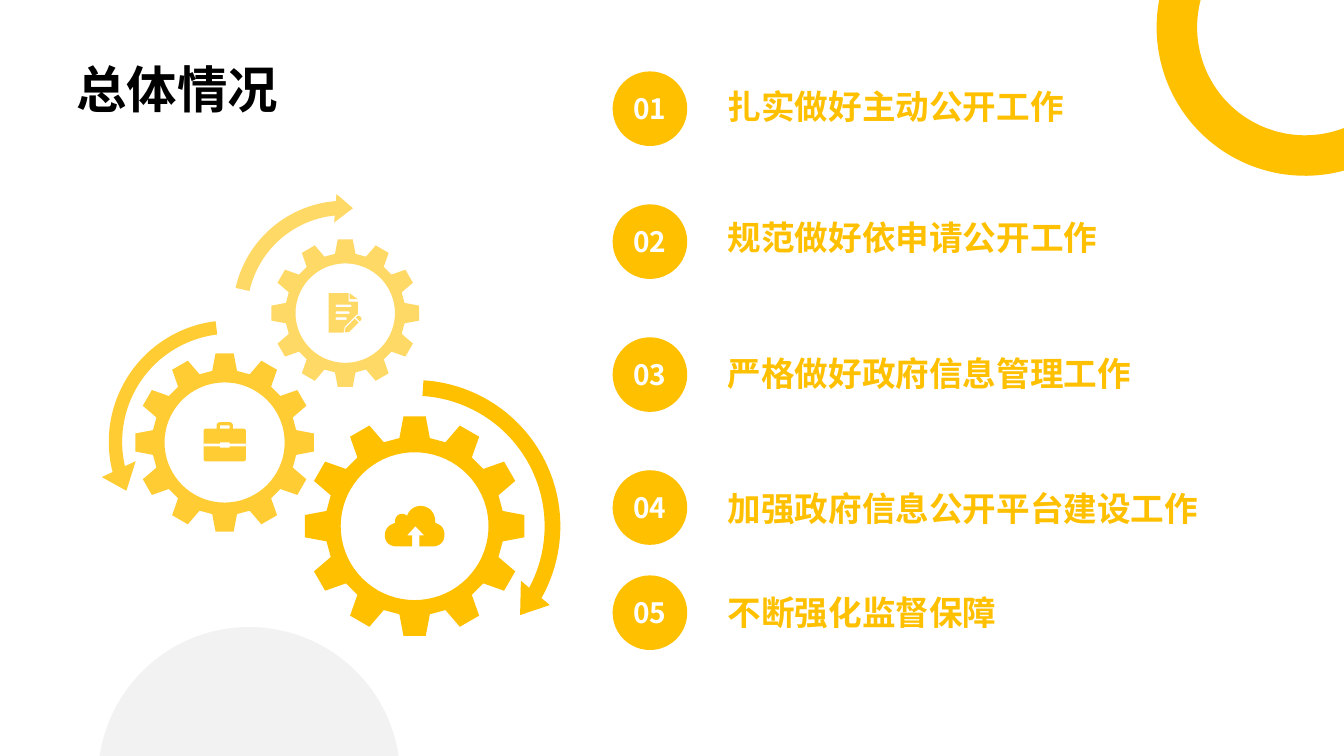
import math

from lxml import etree
from pptx import Presentation
from pptx.dml.color import RGBColor
from pptx.enum.shapes import MSO_SHAPE
from pptx.enum.text import MSO_ANCHOR, PP_ALIGN
from pptx.oxml.ns import qn
from pptx.util import Cm, Pt

OVAL, CIRCULAR_ARROW = MSO_SHAPE.OVAL, MSO_SHAPE.CIRCULAR_ARROW
BOTTOM, MIDDLE = MSO_ANCHOR.BOTTOM, MSO_ANCHOR.MIDDLE
LEFT, CENTER, JUSTIFY = PP_ALIGN.LEFT, PP_ALIGN.CENTER, PP_ALIGN.JUSTIFY

FONT = "Noto Sans CJK SC"
COLORS = {"amber": "FFC000", "black": "000000", "white": "FFFFFF"}
TEETH = 12

# Number, top of its disc, heading, top of the heading (cm)
TOPICS = [
    ("01", 1.8, "扎实做好主动公开工作", 2.29),
    ("02", 5.15, "规范做好依申请公开工作", 5.59),
    ("03", 8.5, "严格做好政府信息管理工作", 9.02),
    ("04", 11.85, "加强政府信息公开平台建设工作", 12.42),
    ("05", 14.5, "不断强化监督保障", 15.04),
]

# Outlines in cm: a pair is a corner, six numbers are a Bezier curve
CLOUD = [[
    (10.97, 13.18), (10.97, 13.18, 11, 12.8, 10.64, 12.75),
    (10.34, 12.73, 10.26, 13, 10.26, 13),
    (10.26, 13, 10.16, 12.9, 10.03, 12.98),
    (9.93, 13.06, 9.96, 13.18, 9.96, 13.18),
    (9.96, 13.18, 9.7, 13.23, 9.7, 13.49),
    (9.7, 13.77, 9.98, 13.77, 9.98, 13.77),
    (10.39, 13.77), (10.39, 13.49), (10.26, 13.49), (10.47, 13.26),
    (10.69, 13.49), (10.57, 13.49), (10.57, 13.77), (10.92, 13.77),
    (10.92, 13.77, 11.18, 13.77, 11.2, 13.51),
    (11.23, 13.23, 10.97, 13.18, 10.97, 13.18),
]]
PAGE = [(8.28, 7.39), (8.79, 7.39), (8.79, 7.6), (9.02, 7.6), (9.02, 7.92),
        (8.97, 7.95), (8.69, 8.23), (8.66, 8.38), (8.28, 8.38)]
PAGE_FOLD = [(8.81, 7.39), (9.02, 7.54), (8.81, 7.54)]
PENCIL = [(8.71, 8.26), (8.94, 8.03), (9.04, 8.13), (8.81, 8.36),
          (8.71, 8.38), (8.69, 8.36)]
ERASER = [(8.97, 8), (8.99, 7.98), (9.05, 7.92, 9.16, 8.02, 9.09, 8.08),
          (9.07, 8.1)]
CASE_GAP = [(5.13, 11.18), (5.54, 11.18), (5.54, 11.15), (5.79, 11.15),
            (5.79, 11.18), (6.2, 11.18), (6.2, 11.25), (5.79, 11.25),
            (5.79, 11.28), (5.54, 11.28), (5.54, 11.25), (5.13, 11.25)]


def polar(cx, cy, radius, degrees):
    angle = math.radians(degrees)
    return cx + radius * math.cos(angle), cy + radius * math.sin(angle)


def arc(cx, cy, radius, start, end, steps=72):
    return [polar(cx, cy, radius, start + (end - start) * i / steps)
            for i in range(steps + 1)]


def rounded_box(left, top, right, bottom, radius):
    corners = [(right - radius, bottom - radius, 0), (left + radius, bottom - radius, 90),
               (left + radius, top + radius, 180), (right - radius, top + radius, 270)]
    return [point for x, y, start in corners
            for point in arc(x, y, radius, start, start + 90, 6)]


def flatten(outline, steps=12):
    """Turn the curves of an outline into short straight pieces."""
    points = []
    for step in outline:
        if len(step) == 2:
            points.append(step)
            continue
        nodes = [points[-1], step[:2], step[2:4], step[4:]]
        for i in range(1, steps + 1):
            t = i / steps
            weights = ((1 - t) ** 3, 3 * t * (1 - t) ** 2, 3 * t * t * (1 - t), t ** 3)
            points.append(tuple(sum(w * node[axis] for w, node in zip(weights, nodes))
                                for axis in (0, 1)))
    return points


def paint(shape, color, opacity=100):
    shape.shadow.inherit = False
    shape.line.fill.background()
    shape.fill.solid()
    shape.fill.fore_color.rgb = RGBColor.from_string(COLORS[color])
    if opacity < 100:
        tint = shape.fill._xPr.find(qn("a:solidFill")).find(qn("a:srgbClr"))
        etree.SubElement(tint, qn("a:alpha"), val=str(opacity * 1000))


def add_outline(slide, outlines, color="amber", opacity=100):
    """Draw closed outlines as one shape; an outline inside another is a hole."""
    builder = None
    for outline in outlines:
        first, *rest = [(Cm(x), Cm(y)) for x, y in flatten(outline)]
        if builder is None:
            builder = slide.shapes.build_freeform(*first)
        else:
            builder.move_to(*first)
        builder.add_line_segments(rest, close=True)
    paint(builder.convert_to_shape(), color, opacity)


def add_gear(slide, cx, cy, radius, opacity):
    rim = []
    for tooth in range(TEETH):
        middle = tooth * 360 / TEETH
        for offset, reach in ((-9.8, 0.81), (-5.8, 1), (5.8, 1), (9.8, 0.81)):
            rim.append(polar(cx, cy, radius * reach, middle + offset))
    add_outline(slide, [rim, arc(cx, cy, radius * 0.67, 0, 360)], opacity=opacity)


def add_turn_arrow(slide, left, top, size, adjustments, opacity, flip=False):
    arrow = slide.shapes.add_shape(CIRCULAR_ARROW, Cm(left), Cm(top), Cm(size), Cm(size))
    for i, value in enumerate(adjustments):
        arrow.adjustments[i] = value
    if flip:
        arrow._element.spPr.find(qn("a:xfrm")).set("flipH", "1")
    paint(arrow, "amber", opacity)


def write(shape, text, size, color, align, anchor, bottom_inset=0, spacing=None):
    frame = shape.text_frame
    frame.word_wrap = True
    frame.vertical_anchor = anchor
    frame.margin_left = frame.margin_right = frame.margin_top = 0
    frame.margin_bottom = Cm(bottom_inset)
    paragraph = frame.paragraphs[0]
    paragraph.alignment = align
    if spacing:
        paragraph.line_spacing = spacing
    run = paragraph.add_run()
    run.text = text
    run.font.size = Pt(size)
    run.font.bold = True
    run.font.color.rgb = RGBColor.from_string(COLORS[color])
    run.font.name = FONT
    etree.SubElement(run._r.get_or_add_rPr(), qn("a:ea"), typeface=FONT)


def add_topic(slide, number, disc_top, heading, heading_top):
    disc = slide.shapes.add_shape(OVAL, Cm(15.44), Cm(disc_top), Cm(1.88), Cm(1.88))
    paint(disc, "amber")
    write(disc, number, 20, "white", CENTER, MIDDLE)
    label = slide.shapes.add_textbox(Cm(18.34), Cm(heading_top), Cm(14.27), Cm(0.99))
    write(label, heading, 24, "amber", JUSTIFY, BOTTOM, 0.1, 1.5)


def add_title(slide, text):
    title = slide.shapes.title
    title.left, title.top, title.width, title.height = Cm(1.93), Cm(0.99), Cm(30), Cm(2)
    write(title, text, 36, "black", LEFT, BOTTOM)


def add_corner_decor(slide):
    add_outline(slide, [arc(32.89, 0.69, 3.74, 74.8, 190.6)
                        + arc(32.89, 0.69, 2.72, 194.7, 68.9)])
    add_outline(slide, [arc(6.28, 19.61, 3.81, 188.5, 351.5)], "black", 5)


def add_icons(slide):
    page_lines = [rounded_box(8.46, top, right, top + 0.06, 0.02)
                  for top, right in ((7.68, 8.86), (7.85, 8.81), (8, 8.74))]
    add_outline(slide, CLOUD)
    add_outline(slide, [PAGE, PAGE_FOLD, PENCIL, ERASER] + page_lines, opacity=60)
    add_outline(slide, [rounded_box(5.13, 10.8, 6.2, 11.63, 0.07), CASE_GAP,
                        [(5.46, 10.8), (5.46, 10.72), (5.46, 10.68, 5.5, 10.64, 5.54, 10.64),
                         (5.79, 10.64), (5.83, 10.64, 5.87, 10.68, 5.87, 10.72),
                         (5.87, 10.8), (5.79, 10.8), (5.79, 10.72), (5.54, 10.72),
                         (5.54, 10.8)]], opacity=80)


def main():
    deck = Presentation()
    deck.slide_width, deck.slide_height = Cm(33.87), Cm(19.05)
    slide = deck.slides.add_slide(deck.slide_layouts[5])
    add_corner_decor(slide)
    add_title(slide, "总体情况")
    add_gear(slide, 10.45, 13.26, 2.78, 100)
    add_gear(slide, 8.7, 7.89, 1.87, 60)
    add_gear(slide, 5.66, 11.15, 2.26, 80)
    add_turn_arrow(slide, 5.69, 4.88, 5.99, (0.06, 5.8, 158.95, 115.63, 0.06), 60)
    add_turn_arrow(slide, 2.44, 7.77, 6.73, (0.05, 6.88, 8.25, 166.17, 0.07), 80, flip=True)
    add_turn_arrow(slide, 6.48, 9.3, 7.92, (0.05, 6.7, 17.31, 164.17, 0.06), 100)
    add_icons(slide)
    for topic in TOPICS:
        add_topic(slide, *topic)
    deck.save("out.pptx")


if __name__ == "__main__":
    main()
